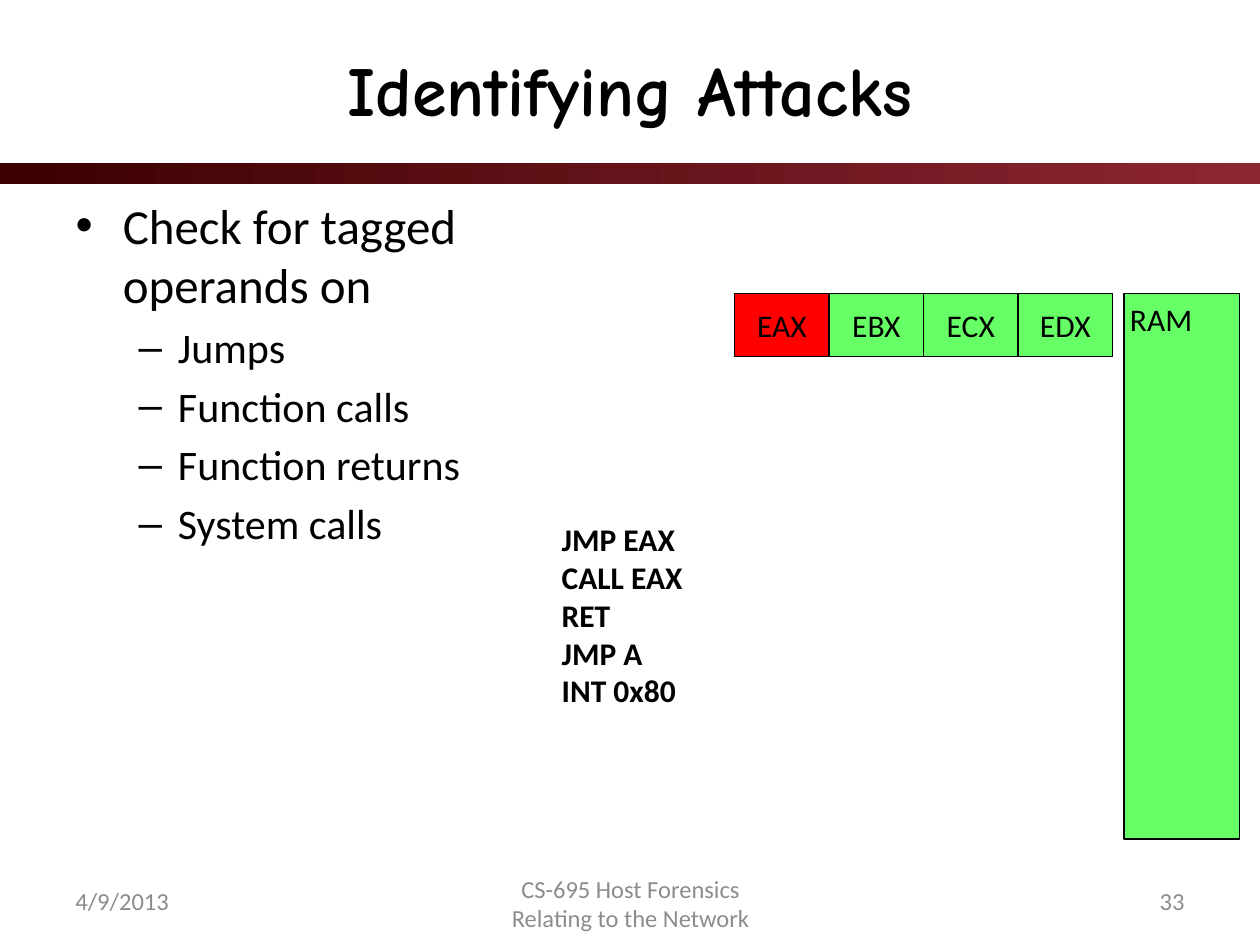
"""Build the slide on checking tagged operands to identify attacks."""
from dataclasses import dataclass

from pptx import Presentation
from pptx.dml.color import RGBColor
from pptx.enum.shapes import MSO_SHAPE
from pptx.enum.text import MSO_ANCHOR, MSO_AUTO_SIZE, PP_ALIGN
from pptx.slide import Slide
from pptx.util import Inches, Pt

BLACK = RGBColor(0x00, 0x00, 0x00)
GRAY = RGBColor(0x8C, 0x8C, 0x8C)
RED = RGBColor(0xFF, 0x00, 0x00)
GREEN = RGBColor(0x66, 0xFF, 0x66)
DARK = RGBColor(0x3C, 0x00, 0x00)
WINE = RGBColor(0x8C, 0x26, 0x33)


@dataclass
class Page:
    slide: Slide
    font: str = "Calibri"
    size: int = 18

    def place(self, shape, box):
        shape.left, shape.top, shape.width, shape.height = map(Inches, box)

    def run(self, para, text, size=None, color=BLACK, bold=False, font=None):
        run = para.add_run()
        run.text = text
        run.font.name = font or self.font
        run.font.size = Pt(size or self.size)
        run.font.bold = bold
        run.font.color.rgb = color

    def lines(self, frame, items):
        for i, item in enumerate(items):
            yield frame.paragraphs[0] if i == 0 else frame.add_paragraph(), item

    def title(self, text, box):
        shape = self.slide.shapes.title
        self.place(shape, box)
        frame = shape.text_frame
        frame.auto_size = MSO_AUTO_SIZE.NONE
        frame.vertical_anchor = MSO_ANCHOR.MIDDLE
        para = frame.paragraphs[0]
        para.alignment = PP_ALIGN.CENTER
        self.run(para, text, 40, bold=True, font="Comic Neue")

    def body(self, items, box):
        shape = self.slide.placeholders[1]
        self.place(shape, box)
        frame = shape.text_frame
        frame.auto_size = MSO_AUTO_SIZE.NONE
        for para, (level, text) in self.lines(frame, items):
            para.level = level
            self.run(para, text, 24 if level else 28)
        frame.paragraphs[0].space_before = Pt(0)

    def bar(self, box):
        shape = self.slide.shapes.add_shape(MSO_SHAPE.RECTANGLE, *map(Inches, box))
        shape.shadow.inherit = False
        shape.line.fill.background()
        shape.fill.gradient()
        shape.fill.gradient_angle = 0
        for stop, color in zip(shape.fill.gradient_stops, (DARK, WINE)):
            stop.color.rgb = color

    def cell(self, box, fill, text=""):
        shape = self.slide.shapes.add_shape(MSO_SHAPE.RECTANGLE, *map(Inches, box))
        shape.shadow.inherit = False
        shape.fill.solid()
        shape.fill.fore_color.rgb = fill
        shape.line.color.rgb = BLACK
        shape.line.width = Pt(0.75)
        if text:
            frame = shape.text_frame
            frame.word_wrap = False
            frame.vertical_anchor = MSO_ANCHOR.MIDDLE
            para = frame.paragraphs[0]
            para.alignment = PP_ALIGN.CENTER
            self.run(para, text)

    def text(self, items, box, bold=False):
        shape = self.slide.shapes.add_textbox(*map(Inches, box))
        frame = shape.text_frame
        frame.word_wrap = False
        for para, item in self.lines(frame, items):
            self.run(para, item, bold=bold)

    def foot(self, rows, box, align):
        frame = self.slide.shapes.add_textbox(*map(Inches, box)).text_frame
        frame.word_wrap = True
        frame.vertical_anchor = MSO_ANCHOR.MIDDLE
        para = frame.paragraphs[0]
        para.alignment = align
        for i, row in enumerate(rows):
            if i:
                para.add_line_break()
            self.run(para, row, 14, GRAY)


def main():
    deck = Presentation()
    deck.slide_width, deck.slide_height = Inches(10), Inches(7.5)
    page = Page(deck.slides.add_slide(deck.slide_layouts[1]))

    page.bar((0, 1.29, 10, 0.17))
    page.title("Identifying Attacks", (0.5, 0.15, 9, 1.1))
    page.body([
        (0, "Check for tagged operands on"),
        (1, "Jumps"),
        (1, "Function calls"),
        (1, "Function returns"),
        (1, "System calls"),
    ], (0.5, 1.5, 4.4, 5.33))

    page.foot(["4/9/2013"], (0.5, 6.95, 1.83, 0.4), PP_ALIGN.LEFT)
    page.foot(["CS-695 Host Forensics", "Relating to the Network"],
              (3.76, 6.97, 2.49, 0.4), PP_ALIGN.CENTER)
    page.foot(["33"], (7.67, 6.95, 1.83, 0.4), PP_ALIGN.RIGHT)

    for i, name in enumerate(["EAX", "EBX", "ECX", "EDX"]):
        fill = RED if name == "EAX" else GREEN
        page.cell((5.83 + 0.75 * i, 2.33, 0.75, 0.5), fill, name)
    page.cell((8.92, 2.33, 0.92, 4.33), GREEN)
    page.text(["RAM"], (8.87, 2.33, 0.96, 0.5))
    page.text(["JMP EAX", "CALL EAX", "RET", "JMP A", "INT 0x80"],
              (4.36, 4.08, 1.17, 1.62), bold=True)

    deck.save("out.pptx")


if __name__ == "__main__":
    main()
